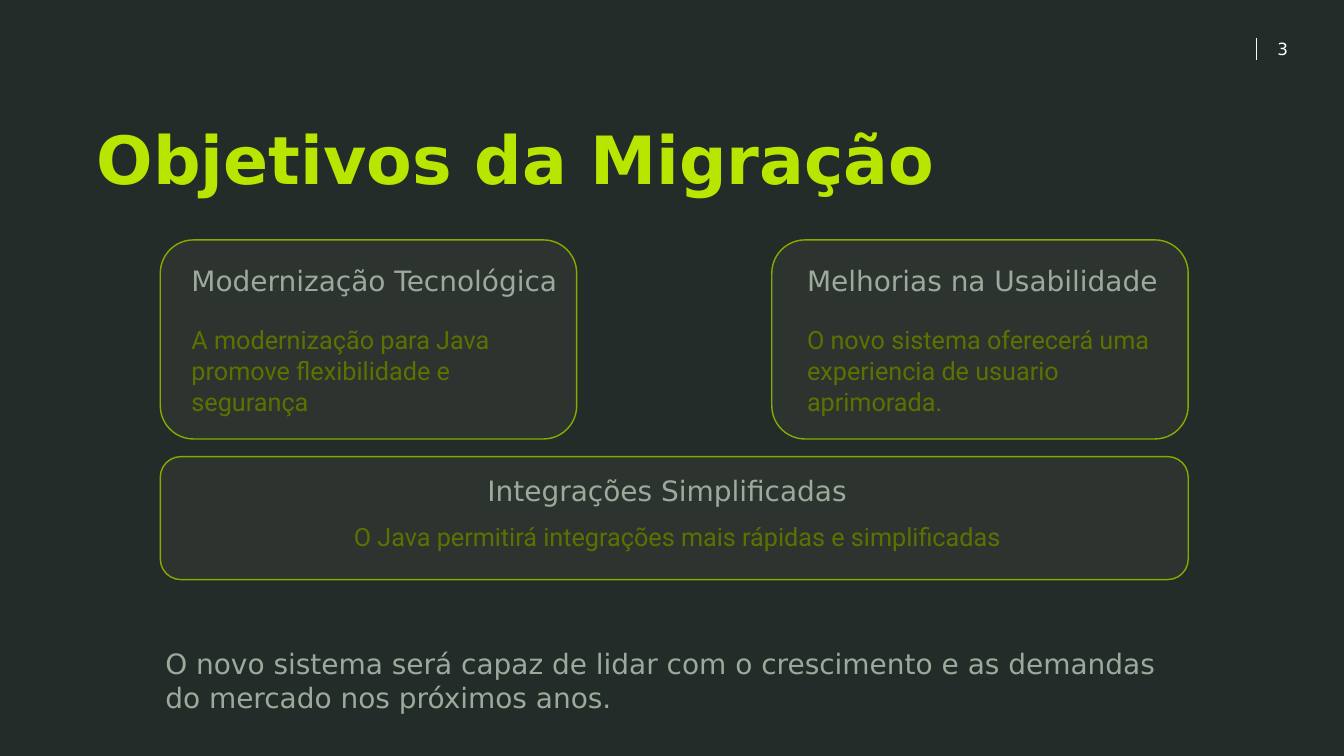
from pptx import Presentation
from pptx.dml.color import RGBColor
from pptx.enum.shapes import MSO_CONNECTOR as Connector, MSO_SHAPE as Shape
from pptx.enum.text import MSO_ANCHOR as Anchor, MSO_AUTO_SIZE as AutoSize, PP_ALIGN as Align
from pptx.oxml.ns import qn
from pptx.util import Inches, Pt
from lxml import etree

COLORS = {
    "background": "232C28",
    "title": "B9E600",
    "heading": "9BAA9B",
    "body": "5C7200",
    "card": "2D342F",
    "border": "89A900",
    "number": "FFFFFF",
    "rule": "FAFAF5",
}


def color(name):
    return RGBColor.from_string(COLORS[name])


class SlideBuilder:
    heading_font = "DejaVu Sans"
    body_font = "Roboto"
    line_spacing = 1.02
    inset = 0.1

    def __init__(self, deck):
        self.page = deck.slides.add_slide(deck.slide_layouts[5])
        fill = self.page.background.fill
        fill.solid()
        fill.fore_color.rgb = color("background")

    def set_text(self, box, text, size, font, ink, bold=False, align=Align.LEFT,
                 spacing=line_spacing, inset_y=inset):
        frame = box.text_frame
        frame.text = text
        frame.word_wrap = True
        frame.vertical_anchor = Anchor.TOP
        frame.margin_left = frame.margin_right = Inches(self.inset)
        frame.margin_top = frame.margin_bottom = Inches(inset_y)
        para = frame.paragraphs[0]
        para.alignment = align
        para.line_spacing = spacing
        para.space_before = Pt(0)
        span = para.runs[0]
        span.font.name = font
        span.font.size = Pt(size)
        span.font.bold = bold
        span.font.color.rgb = color(ink)

    def title(self, text, left, top, width, height):
        box = self.page.shapes.title
        box.left, box.top = Inches(left), Inches(top)
        box.width, box.height = Inches(width), Inches(height)
        self.set_text(box, text, 95, self.heading_font, "title", bold=True)
        box.text_frame.auto_size = AutoSize.NONE

    def text_box(self, left, top, width, height):
        return self.page.shapes.add_textbox(
            Inches(left), Inches(top), Inches(width), Inches(height))

    def heading(self, text, left, top, width=10.3, height=0.89):
        box = self.text_box(left, top, width, height)
        self.set_text(box, text, 40, self.heading_font, "heading")
        box.text_frame.auto_size = AutoSize.SHAPE_TO_FIT_TEXT

    def body(self, text, left, top, width=7.1, height=2.06):
        box = self.text_box(left, top, width, height)
        self.set_text(box, text, 36, self.body_font, "body")
        box.text_frame.auto_size = AutoSize.SHAPE_TO_FIT_TEXT

    def card(self, left, top, width, height):
        card = self.page.shapes.add_shape(
            Shape.ROUNDED_RECTANGLE,
            Inches(left), Inches(top), Inches(width), Inches(height))
        card.shadow.inherit = False
        card.fill.solid()
        card.fill.fore_color.rgb = color("card")
        card.line.color.rgb = color("border")
        card.line.width = Pt(2)

    def vertical_rule(self, x, top, bottom):
        rule = self.page.shapes.add_connector(
            Connector.STRAIGHT, Inches(x), Inches(top), Inches(x), Inches(bottom))
        rule.line.color.rgb = color("rule")
        rule.line.width = Pt(2)
        etree.SubElement(rule._element.spPr, qn("a:effectLst"))

    def page_number(self, text, left, top, width, height):
        box = self.text_box(left, top, width, height)
        self.set_text(box, text, 24, self.heading_font, "number",
                      align=Align.RIGHT, spacing=1.0, inset_y=0.05)


def main():
    deck = Presentation()
    deck.slide_width, deck.slide_height = Inches(26.66), Inches(15)
    slide = SlideBuilder(deck)

    # Page number and title
    slide.page_number("3", 24.27, 0.72, 1.38, 0.62)
    slide.vertical_rule(24.92, 0.75, 1.2)
    slide.title("Objetivos da Migração", 1.82, 2.21, 21.02, 1.91)

    # Two goal cards side by side
    left, full_width, card_width = 3.18, 20.39, 8.26
    goals = [
        (left, 3.7, "Modernização Tecnológica",
         "A modernização para Java promove flexibilidade e segurança"),
        (left + full_width - card_width, 15.91, "Melhorias na Usabilidade",
         "O novo sistema oferecerá uma experiencia de usuario aprimorada."),
    ]
    for card_left, text_left, heading, body in goals:
        slide.card(card_left, 4.76, card_width, 3.95)
        slide.heading(heading, text_left, 5.11)
        slide.body(body, text_left, 6.32)

    # Full-width goal card
    slide.card(left, 9.06, full_width, 2.44)
    slide.heading("Integrações Simplificadas", 9.57, 9.28)
    slide.body("O Java permitirá integrações mais rápidas e simplificadas",
               6.92, 10.23, 15.59, 0.82)

    # Closing statement
    slide.heading("O novo sistema será capaz de lidar com o crescimento e as "
                  "demandas do mercado nos próximos anos.",
                  left, 12.71, full_width, 1.58)

    deck.save("out.pptx")


if __name__ == "__main__":
    main()
